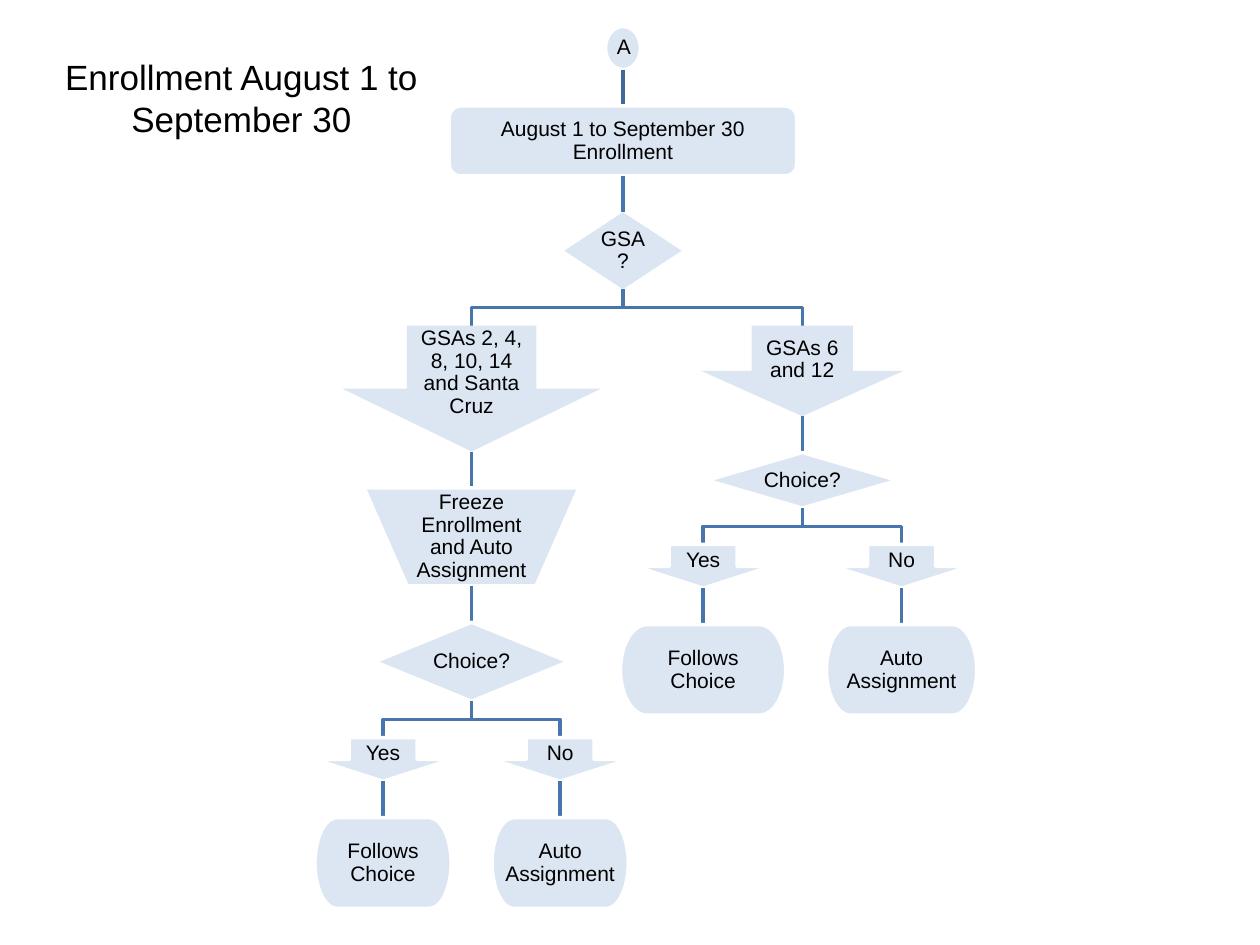
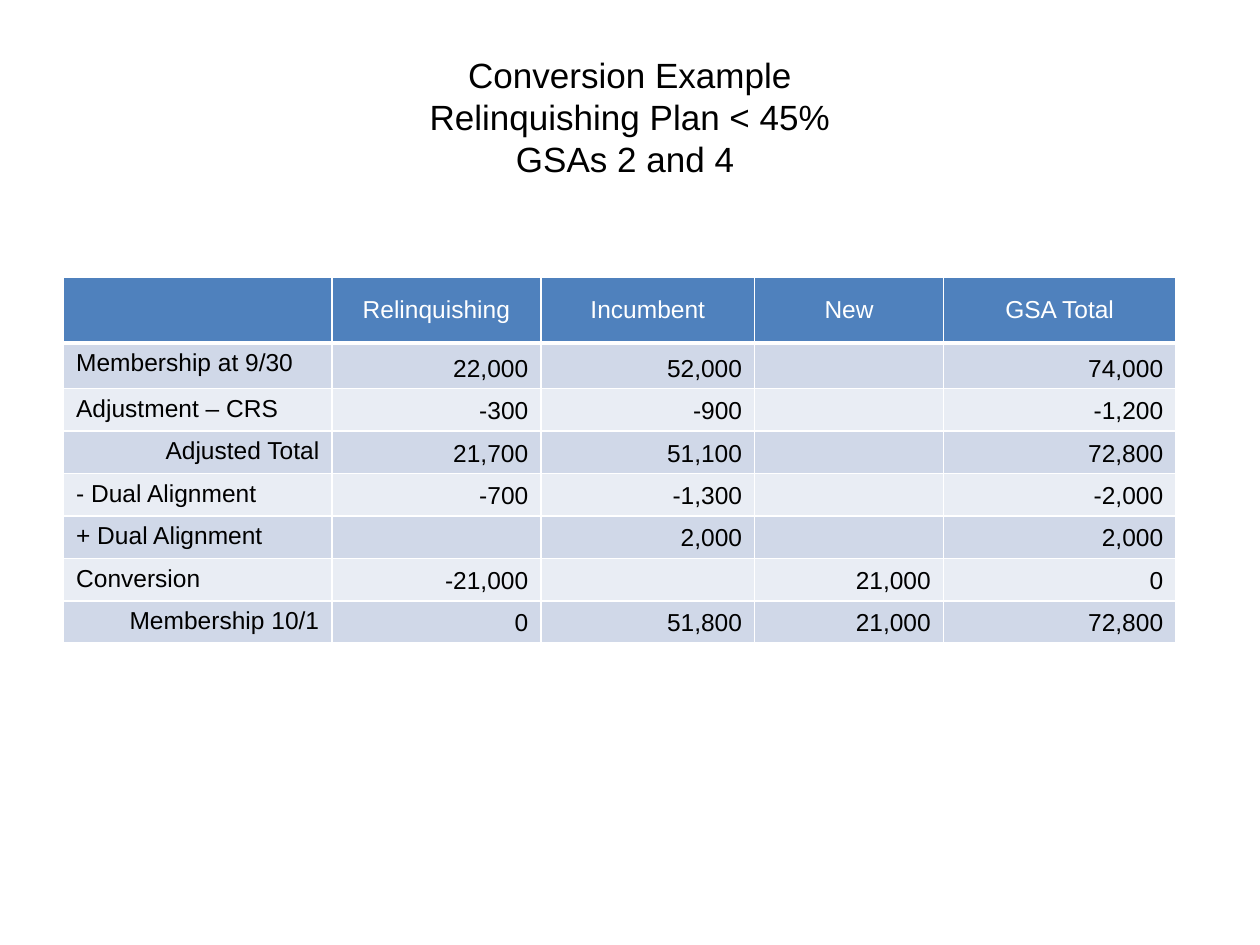
"""Build the enrollment flow chart slide and the conversion table slide."""
import lxml.etree
import pptx
import pptx.dml.color
import pptx.enum.shapes
import pptx.enum.text
import pptx.oxml.ns
import pptx.util

Pt = pptx.util.Pt
Kind = pptx.enum.shapes.MSO_SHAPE
Align = pptx.enum.text.PP_ALIGN
Anchor = pptx.enum.text.MSO_ANCHOR
qn = pptx.oxml.ns.qn

FONT = "Arial"
BLACK, WHITE = "000000", "FFFFFF"
PALE, LINK, DARK = "DCE6F2", "4875AC", "3F6797"
HEAD, BANDS = "4F81BD", ("D0D8E8", "E9EDF4")
GAP = 20.75


def tint(code):
    return pptx.dml.color.RGBColor.from_string(code)


class Deck:
    def __init__(self):
        self.show = pptx.Presentation()
        self.show.slide_width, self.show.slide_height = Pt(720), Pt(540)
        self.slide = None

    def start(self, lines, left, top, width, height):
        self.slide = self.show.slides.add_slide(self.show.slide_layouts[5])
        title = self.slide.shapes.title
        title.left, title.top = Pt(left), Pt(top)
        title.width, title.height = Pt(width), Pt(height)
        frame = title.text_frame
        frame.auto_size = pptx.enum.text.MSO_AUTO_SIZE.NONE
        frame.vertical_anchor = Anchor.MIDDLE
        para = frame.paragraphs[0]
        para.alignment = Align.CENTER
        for i, line in enumerate(lines):
            if i:
                para.add_line_break()
            self.label(para, line, 20)

    def label(self, para, text, size, color=BLACK):
        run = para.add_run()
        run.text = text
        run.font.name, run.font.size, run.font.bold = FONT, Pt(size), False
        run.font.color.rgb = tint(color)

    def stroke(self, shape, color):
        shape.line.color.rgb = tint(color)
        shape.line.width = Pt(2)

    def straight(self, x, top, color):
        line = self.slide.shapes.add_connector(
            pptx.enum.shapes.MSO_CONNECTOR.STRAIGHT, Pt(x), Pt(top), Pt(x), Pt(top + GAP))
        self.stroke(line, color)
        lxml.etree.SubElement(line._element.spPr, qn("a:effectLst"))
        return line

    def elbow(self, start, end, top):
        mid = top + GAP / 2
        pen = self.slide.shapes.build_freeform(Pt(start), Pt(top))
        pen.add_line_segments(
            [(Pt(start), Pt(mid)), (Pt(end), Pt(mid)), (Pt(end), Pt(top + GAP))], close=False)
        shape = pen.convert_to_shape()
        shape.shadow.inherit = False
        shape.fill.background()
        self.stroke(shape, LINK)

    def box(self, kind, mid, top, width, height, text, ring=True):
        shape = self.slide.shapes.add_shape(
            kind, Pt(mid - width / 2), Pt(top), Pt(width), Pt(height))
        shape.shadow.inherit = False
        shape.fill.solid()
        shape.fill.fore_color.rgb = tint(PALE)
        if ring:
            self.stroke(shape, WHITE)
        else:
            shape.line.fill.background()
        frame = shape.text_frame
        frame.word_wrap = True
        frame.vertical_anchor = Anchor.MIDDLE
        frame.margin_left = frame.margin_right = Pt(3.6)
        frame.margin_top = frame.margin_bottom = Pt(3.6)
        para = frame.paragraphs[0]
        para.alignment, para.line_spacing = Align.CENTER, 0.9
        self.label(para, text, 12)
        return shape, mid, top + height

    def below(self, node, kind, width, height, text, shift=0, ring=True, color=LINK):
        above, mid, base = node
        line = None
        if shift:
            self.elbow(mid, mid + shift, base)
        else:
            line = self.straight(mid, base, color)
        child = self.box(kind, mid + shift, base + GAP, width, height, text, ring)
        if line:
            if above.auto_shape_type != Kind.FLOWCHART_CONNECTOR:
                line.begin_connect(above, 2)
            line.end_connect(child[0], 0)
        return child

    def choice(self, node, size, shift, widths):
        ask = self.below(node, Kind.FLOWCHART_DECISION, *size, "Choice?")
        ends = (("Yes", "Follows Choice", -shift), ("No", "Auto Assignment", shift))
        for (reply, result, move), width in zip(ends, widths):
            arrow = self.below(ask, Kind.DOWN_ARROW, 77.8, 25, reply, move)
            self.below(arrow, Kind.FLOWCHART_TERMINATOR, width, 51.8, result)

    def edge(self, cell, base):
        props = cell._tc.get_or_add_tcPr()
        for side, width in (("L", 1), ("R", 1), ("T", 1), ("B", base)):
            line = lxml.etree.SubElement(props, qn("a:ln" + side), w=str(Pt(width)))
            fill = lxml.etree.SubElement(line, qn("a:solidFill"))
            lxml.etree.SubElement(fill, qn("a:srgbClr"), val=WHITE)

    def cell(self, cell, text, fill, align, anchor, color=BLACK, base=1):
        self.edge(cell, base)
        cell.fill.solid()
        cell.fill.fore_color.rgb = tint(fill)
        cell.vertical_anchor = anchor
        para = cell.text_frame.paragraphs[0]
        para.alignment = align
        if text:
            self.label(para, text, 14, color)
        else:
            lxml.etree.SubElement(para._p, qn("a:endParaRPr"), sz="1400")

    def table(self, left, top, widths, heights, rows, totals):
        grid = self.slide.shapes.add_table(
            len(rows), len(widths), Pt(left), Pt(top), Pt(sum(widths)), Pt(sum(heights))).table
        for col, width in zip(grid.columns, widths):
            col.width = Pt(width)
        for r, (row, height) in enumerate(zip(rows, heights)):
            grid.rows[r].height = Pt(height)
            for c, text in enumerate(row):
                cell = grid.cell(r, c)
                if r == 0:
                    self.cell(cell, text, HEAD, Align.CENTER, Anchor.MIDDLE, WHITE, 3)
                else:
                    align = Align.RIGHT if c or text in totals else Align.LEFT
                    anchor = Anchor.BOTTOM if c else Anchor.TOP
                    self.cell(cell, text, BANDS[(r - 1) % 2], align, anchor)


def flow(deck):
    deck.start(["Enrollment August 1 to September 30"], 12, 21.6, 252, 68.4)
    top = deck.box(Kind.FLOWCHART_CONNECTOR, 356, 15.1, 20, 24.7, "A")
    period = deck.below(top, Kind.FLOWCHART_ALTERNATE_PROCESS, 198.6, 40,
                        "August 1 to September 30 Enrollment", color=DARK)
    area = deck.below(period, Kind.FLOWCHART_DECISION, 67, 44, "GSA?", ring=False)
    left = deck.below(area, Kind.DOWN_ARROW, 148, 72,
                      "GSAs 2, 4, 8, 10, 14 and Santa Cruz", -86.5, False)
    freeze = deck.below(left, Kind.FLOWCHART_MANUAL_OPERATION, 122.8, 56,
                        "Freeze Enrollment and Auto Assignment")
    deck.choice(freeze, (110.6, 45.2), 50.6, (77.8, 77.8))
    right = deck.below(area, Kind.DOWN_ARROW, 115.6, 51.8, "GSAs 6 and 12", 102.5, False)
    deck.choice(right, (108.8, 31.8), 56.7, (94.4, 85.8))


def plan(deck):
    deck.start(["Conversion Example", "Relinquishing Plan < 45%", "GSAs 2 and 4 "],
               18, 21.6, 684, 90)
    rows = [
        ("", "Relinquishing", "Incumbent", "New", "GSA Total"),
        ("Membership at 9/30", "22,000", "52,000", "", "74,000"),
        ("Adjustment – CRS", "-300", "-900", "", "-1,200"),
        ("Adjusted Total", "21,700", "51,100", "", "72,800"),
        ("- Dual Alignment", "-700", "-1,300", "", "-2,000"),
        ("+ Dual Alignment", "", "2,000", "", "2,000"),
        ("Conversion", "-21,000", "", "21,000", "0"),
        ("Membership 10/1", "0", "51,800", "21,000", "72,800"),
    ]
    deck.table(36.3, 158.7, (153.4, 119.4, 122.2, 107.9, 132.8),
               [37.4, 26] + [24] * 6, rows, ("Adjusted Total", "Membership 10/1"))


def main():
    deck = Deck()
    flow(deck)
    plan(deck)
    deck.show.save("out.pptx")


if __name__ == "__main__":
    main()
